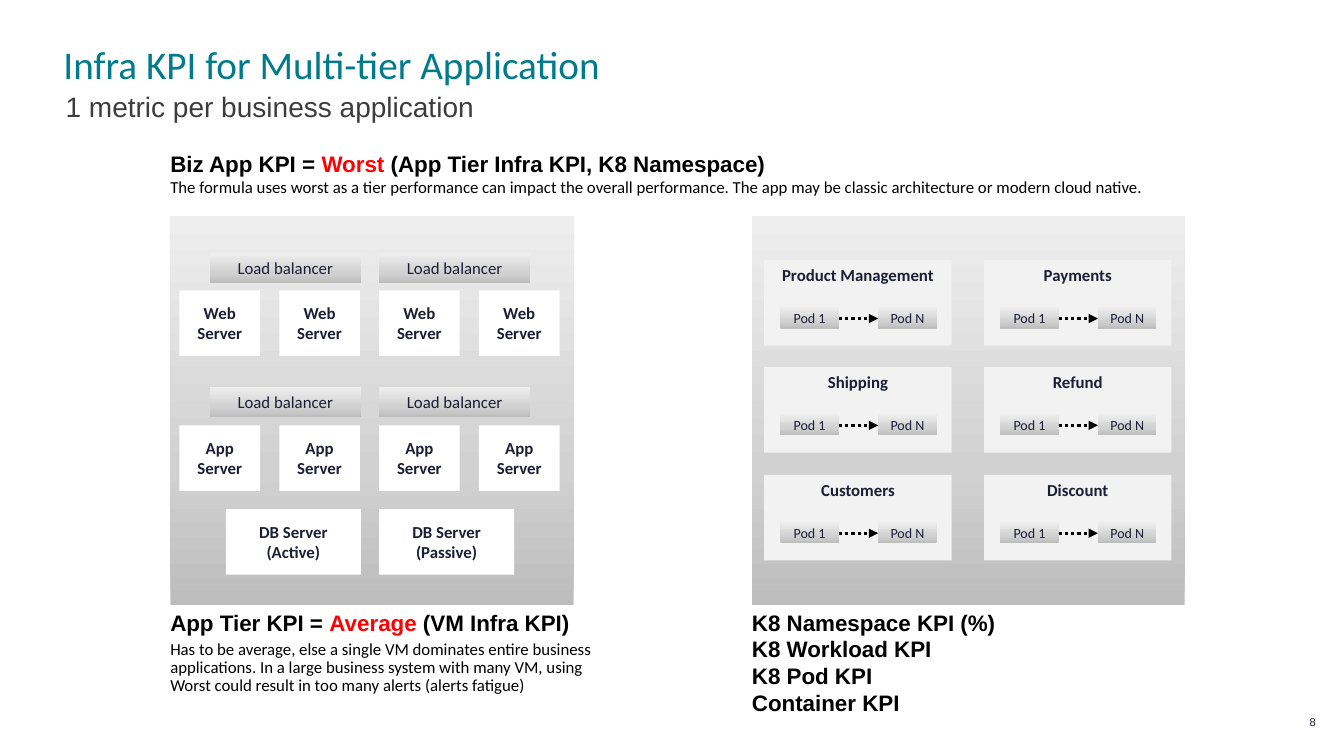
import copy
from dataclasses import dataclass

import pptx
import pptx.dml.color
import pptx.dml.fill
import pptx.enum.dml
import pptx.enum.shapes
import pptx.enum.text
import pptx.oxml
import pptx.oxml.ns
import pptx.shapes.autoshape
import pptx.slide
import pptx.text.text
import pptx.util

EMU_PER_PX = 9144  # 100 px to the inch
COLORS = {
    "title": "007B8C", "subtitle": "3C3C3C", "ink": "1B1E35", "black": "000001",
    "accent": "FF0000", "server": "FFFFFF", "namespace": "F2F2F2",
}
GRADIENT = ((0, "BDBDBD"), (0.35, "D1D1D1"), (1, "EEEEEE"))
ALIGN = pptx.enum.text.PP_ALIGN
ANCHOR = pptx.enum.text.MSO_ANCHOR


@dataclass(frozen=True)
class Box:
    left: int
    top: int
    width: int
    height: int


@dataclass(frozen=True)
class Style:
    size: int
    font: str = "Calibri"
    color: str = "black"
    bold: bool = False


@dataclass(frozen=True)
class Line:
    """One paragraph; text between asterisks takes the accent colour."""
    text: str
    style: Style
    spacing: float = 1.0
    before: int = 0
    align: ALIGN = ALIGN.LEFT


@dataclass(frozen=True)
class Tier:
    server: str
    balancer_top: int
    server_top: int


HEADING = Style(16, "Arial", bold=True)
BODY = Style(12)
LABEL = Style(12, color="ink")
BOLD_LABEL = Style(12, color="ink", bold=True)
POD_LABEL = Style(10, color="ink")

TIERS = (Tier("Web Server", 251, 288), Tier("App Server", 384, 422))
SERVER_LEFTS = [178 + 99 * column for column in range(4)]
BALANCER_LEFTS = (208, 376)
DATABASES = ((224, "DB Server\n(Active)"), (376, "DB Server\n(Passive)"))
NAMESPACE_LEFTS = (758, 976)
NAMESPACE_ROWS = (
    (258, ("Product Management", "Payments")),
    (364, ("Shipping", "Refund")),
    (471, ("Customers", "Discount")),
)


def px(value: int) -> pptx.util.Emu:
    return pptx.util.Emu(value * EMU_PER_PX)


def place(box: Box) -> tuple[pptx.util.Emu, ...]:
    return px(box.left), px(box.top), px(box.width), px(box.height)


def rgb(name: str) -> pptx.dml.color.RGBColor:
    return pptx.dml.color.RGBColor.from_string(COLORS[name])


def set_font(paragraph: pptx.text.text._Paragraph, style: Style) -> None:
    paragraph.font.size = pptx.util.Pt(style.size)
    paragraph.font.name = style.font
    paragraph.font.bold = style.bold
    paragraph.font.color.rgb = rgb(style.color)


def add_text(slide: pptx.slide.Slide, box: Box, lines: list[Line],
             anchor: ANCHOR = ANCHOR.TOP, inset: bool = True) -> None:
    frame = slide.shapes.add_textbox(*place(box)).text_frame
    frame.word_wrap = True
    frame.vertical_anchor = anchor
    if not inset:
        frame.margin_left = frame.margin_right = 0
        frame.margin_top = frame.margin_bottom = 0
    for index, line in enumerate(lines):
        paragraph = frame.add_paragraph() if index else frame.paragraphs[0]
        paragraph.alignment = line.align
        paragraph.line_spacing = line.spacing
        if line.before:
            paragraph.space_before = pptx.util.Pt(line.before)
        set_font(paragraph, line.style)
        for part, text in enumerate(line.text.split("*")):
            run = paragraph.add_run()
            run.text = text
            if part % 2:
                run.font.color.rgb = rgb("accent")


def set_gradient(shape: pptx.shapes.autoshape.Shape) -> None:
    shape.fill.gradient()
    shape.fill.gradient_angle = 90
    stop_list = shape._element.spPr.find(".//" + pptx.oxml.ns.qn("a:gsLst"))
    stop_list.append(copy.deepcopy(stop_list[-1]))
    for stop, (position, color) in zip(shape.fill.gradient_stops, GRADIENT):
        stop.position = position
        stop.color.rgb = pptx.dml.color.RGBColor.from_string(color)


def add_block(slide: pptx.slide.Slide, box: Box, fill: str = "", text: str = "",
              style: Style = LABEL, anchor: ANCHOR = ANCHOR.MIDDLE) -> None:
    """Borderless rectangle; without a fill colour it gets the grey gradient."""
    shape = slide.shapes.add_shape(pptx.enum.shapes.MSO_SHAPE.RECTANGLE, *place(box))
    shape.shadow.inherit = False
    shape.line.fill.background()
    if fill:
        shape.fill.solid()
        shape.fill.fore_color.rgb = rgb(fill)
    else:
        set_gradient(shape)
    if text:
        shape.text_frame.text = text
        shape.text_frame.word_wrap = True
        shape.text_frame.vertical_anchor = anchor
        for paragraph in shape.text_frame.paragraphs:
            paragraph.alignment = ALIGN.CENTER
            set_font(paragraph, style)


def add_dotted_arrow(slide: pptx.slide.Slide, start: int, end: int, y: int) -> None:
    arrow = slide.shapes.add_connector(
        pptx.enum.shapes.MSO_CONNECTOR.STRAIGHT, px(start), px(y), px(end), px(y))
    arrow.line.color.rgb = rgb("black")
    arrow.line.width = pptx.util.Pt(2.25)
    arrow.line.dash_style = pptx.enum.dml.MSO_LINE.ROUND_DOT
    head = pptx.oxml.parse_xml(
        f'<a:tailEnd {pptx.oxml.ns.nsdecls("a")} type="triangle"/>')
    arrow.line._get_or_add_ln().append(head)
    arrow._element.spPr.append(
        pptx.oxml.parse_xml(f'<a:effectLst {pptx.oxml.ns.nsdecls("a")}/>'))


def add_namespace(slide: pptx.slide.Slide, left: int, top: int, name: str) -> None:
    add_block(slide, Box(left, top, 186, 85), "namespace", name, BOLD_LABEL, ANCHOR.TOP)
    for offset, pod in ((16, "Pod 1"), (113, "Pod N")):
        add_block(slide, Box(left + offset, top + 47, 58, 21), text=pod, style=POD_LABEL)
    add_dotted_arrow(slide, left + 74, left + 113, top + 58)


def main() -> None:
    presentation = pptx.Presentation()
    presentation.slide_width, presentation.slide_height = px(1333), px(750)
    slide = presentation.slides.add_slide(presentation.slide_layouts[6])

    # Title, subtitle and page number
    add_text(slide, Box(63, 45, 1203, 42), [Line("Infra KPI for Multi-tier Application",
             Style(28, color="title"), 0.9)], ANCHOR.BOTTOM, inset=False)
    add_text(slide, Box(65, 89, 1199, 27), [Line("1 metric per business application",
             Style(20, "Arial", "subtitle"))], inset=False)
    add_text(slide, Box(1257, 707, 48, 20), [Line("8", Style(8, "Arial", "ink"), 0.9,
             align=ALIGN.RIGHT)], ANCHOR.MIDDLE, inset=False)

    # Overall formula
    add_text(slide, Box(159, 138, 1065, 68), [
        Line("Biz App KPI = *Worst* (App Tier Infra KPI, K8 Namespace)", HEADING),
        Line("The formula uses worst as a tier performance can impact the overall performance. "
             "The app may be classic architecture or modern cloud native.", BODY),
    ], ANCHOR.MIDDLE)

    # Classic architecture
    add_block(slide, Box(169, 214, 400, 386))
    for tier in TIERS:
        for left in BALANCER_LEFTS:
            add_block(slide, Box(left, tier.balancer_top, 150, 30), text="Load balancer")
        for left in SERVER_LEFTS:
            add_block(slide, Box(left, tier.server_top, 80, 65), "server",
                      tier.server, BOLD_LABEL)
    for left, name in DATABASES:
        add_block(slide, Box(left, 505, 134, 65), "server", name, BOLD_LABEL)
    add_text(slide, Box(159, 599, 438, 153), [
        Line("App Tier KPI = *Average* (VM Infra KPI)", HEADING),
        Line("Has to be average, else a single VM dominates entire business applications. "
             "In a large business system with many VM, using Worst could result in too many "
             "alerts (alerts fatigue)", BODY, 0.9, before=4),
    ])

    # Cloud native architecture
    add_block(slide, Box(746, 214, 429, 386))
    for top, names in NAMESPACE_ROWS:
        for left, name in zip(NAMESPACE_LEFTS, names):
            add_namespace(slide, left, top, name)
    levels = ("K8 Namespace KPI (%)", "K8 Workload KPI", "K8 Pod KPI", "Container KPI")
    add_text(slide, Box(736, 599, 530, 153), [Line(level, HEADING) for level in levels])

    presentation.save("out.pptx")


if __name__ == "__main__":
    main()
